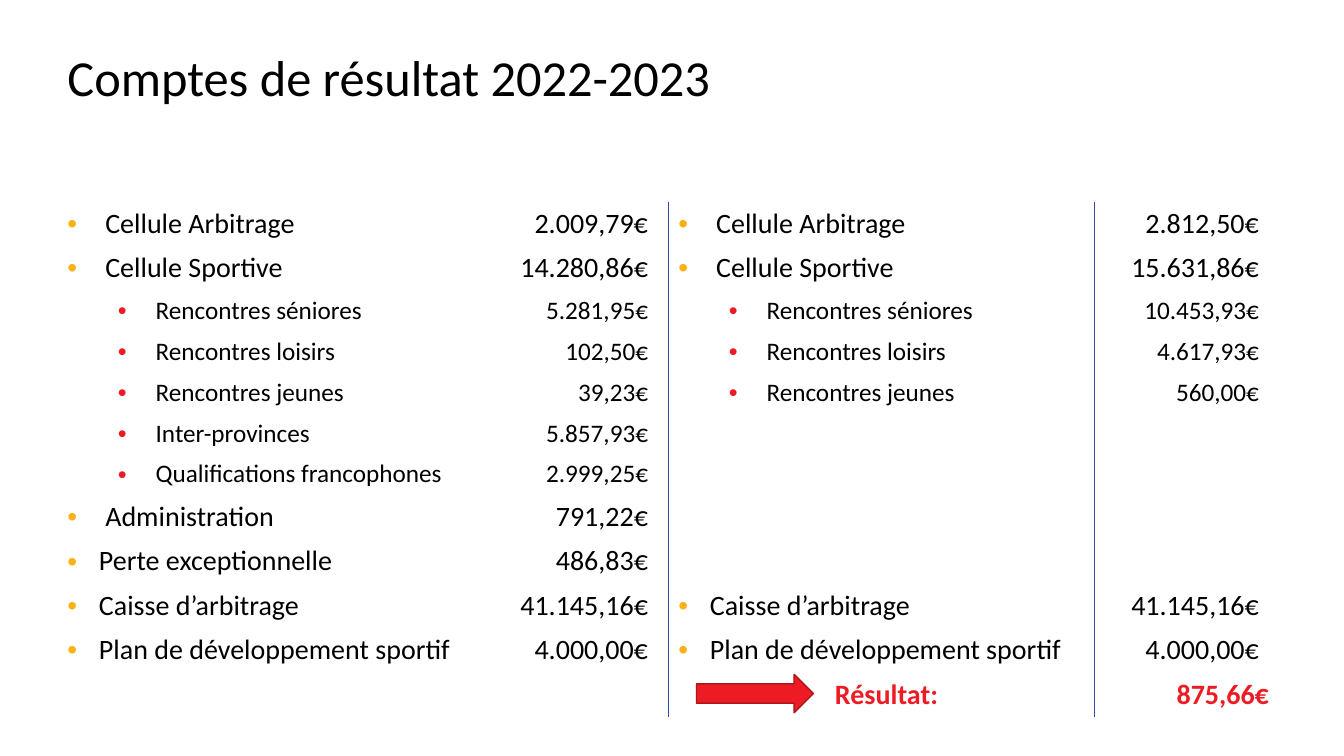
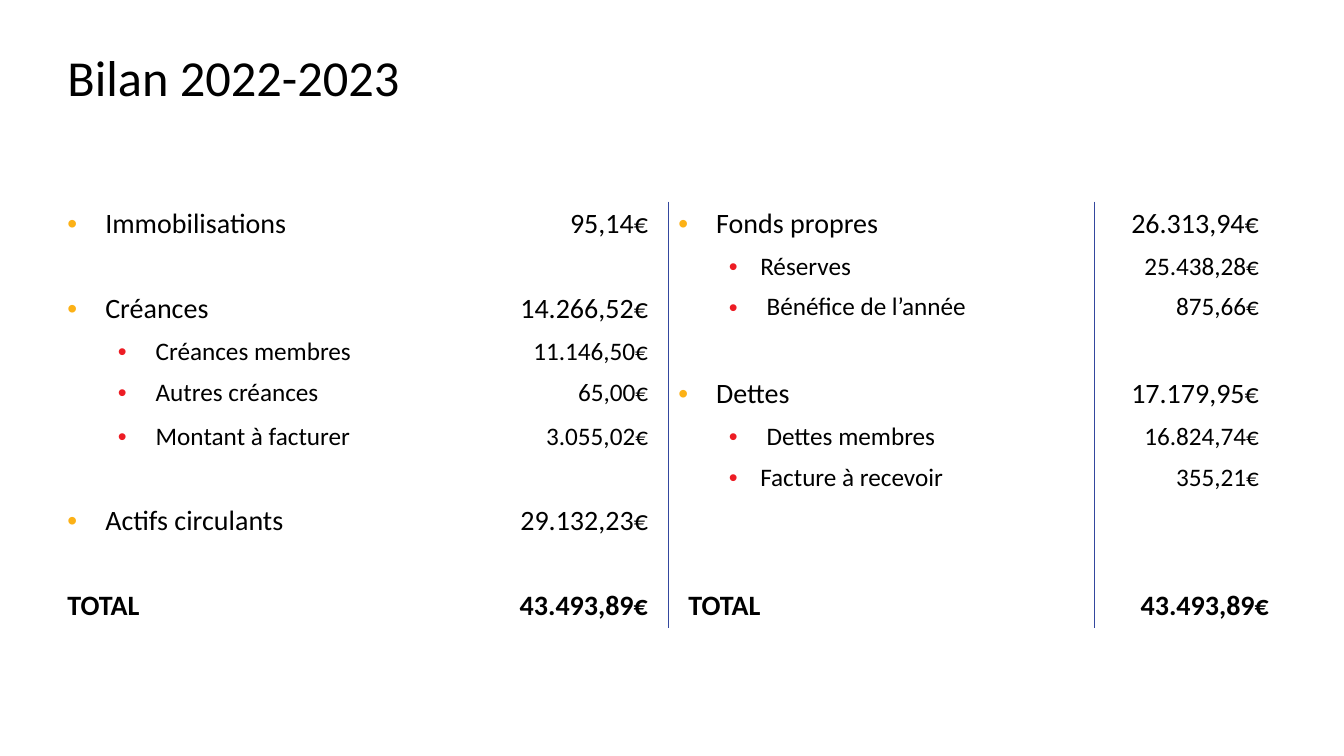
from lxml.etree import SubElement, Element
from pptx import Presentation
from pptx.dml.color import RGBColor
from pptx.enum.shapes import MSO_SHAPE as Shape
from pptx.enum.text import MSO_ANCHOR as Anchor, PP_ALIGN as Align
from pptx.oxml.ns import qn
from pptx.util import Pt

BLACK, RED, DARK_RED, AMBER, BLUE = "000000", "ED1C24", "AF151B", "FCB116", "34489E"
FONT = "Calibri"
NO_GRID = "{2D5ABB26-0587-4C30-8999-92F81FD0307C}"
TITLE_BOX = (41, 28.8, 880, 56.9)
TABLE_LEFT, TABLE_TOP, ROW_HEIGHT = 41, 144, 29.2
COLUMN_WIDTHS = (301, 135.4, 304.6, 131.8)
RULES = (1, 2)
PAD, WIDE_PAD = 7.2, 14.4

BASE = {"size": 20, "color": BLACK, "bold": False, "bullet": None, "left": 0, "hang": 0,
        "align": Align.LEFT, "label_pad": PAD, "amount_pad": WIDE_PAD}
MAIN = BASE | {"bullet": AMBER, "left": 27, "hang": 27}
MAIN_NEAR = MAIN | {"left": 22.5, "hang": 22.5}
SUB = BASE | {"size": 18, "bullet": RED, "left": 63, "hang": 27}
SUB_NEAR = SUB | {"left": 58.5, "hang": 22.5}
TOTAL = BASE | {"bold": True}
TOTAL_RIGHT = TOTAL | {"label_pad": WIDE_PAD, "amount_pad": PAD}
RESULT = TOTAL_RIGHT | {"color": RED, "align": Align.CENTER}

PAGES = [
    {
        "title": "Comptes de résultat 2022-2023",
        "arrow": (497.5, 481.7, 83.5, 27.4),
        "left": [
            ("Cellule Arbitrage", "2.009,79€", MAIN),
            ("Cellule Sportive", "14.280,86€", MAIN),
            ("Rencontres séniores", "5.281,95€", SUB),
            ("Rencontres loisirs", "102,50€", SUB),
            ("Rencontres jeunes", "39,23€", SUB),
            ("Inter-provinces", "5.857,93€", SUB),
            ("Qualifications francophones", "2.999,25€", SUB),
            ("Administration", "791,22€", MAIN),
            ("Perte exceptionnelle", "486,83€", MAIN_NEAR),
            ("Caisse d’arbitrage", "41.145,16€", MAIN_NEAR),
            ("Plan de développement sportif", "4.000,00€", MAIN_NEAR),
            None,
        ],
        "right": [
            ("Cellule Arbitrage", "2.812,50€", MAIN),
            ("Cellule Sportive", "15.631,86€", MAIN),
            ("Rencontres séniores", "10.453,93€", SUB),
            ("Rencontres loisirs", "4.617,93€", SUB),
            ("Rencontres jeunes", "560,00€", SUB),
            None,
            None,
            None,
            None,
            ("Caisse d’arbitrage", "41.145,16€", MAIN_NEAR),
            ("Plan de développement sportif", "4.000,00€", MAIN_NEAR),
            ("Résultat:", "875,66€", RESULT),
        ],
    },
    {
        "title": "Bilan 2022-2023",
        "arrow": None,
        "left": [
            ("Immobilisations", "95,14€", MAIN),
            None,
            ("Créances", "14.266,52€", MAIN),
            ("Créances membres", "11.146,50€", SUB),
            ("Autres créances", "65,00€", SUB),
            ("Montant à facturer", "3.055,02€", SUB),
            None,
            ("Actifs circulants", "29.132,23€", MAIN),
            None,
            ("TOTAL", "43.493,89€", TOTAL),
        ],
        "right": [
            ("Fonds propres", "26.313,94€", MAIN),
            ("Réserves", "25.438,28€", SUB_NEAR),
            ("Bénéfice de l’année", "875,66€", SUB),
            None,
            ("Dettes", "17.179,95€", MAIN),
            ("Dettes membres", "16.824,74€", SUB),
            ("Facture à recevoir", "355,21€", SUB_NEAR),
            None,
            None,
            ("TOTAL", "43.493,89€", TOTAL_RIGHT),
        ],
    },
]


def rgb(value):
    return RGBColor.from_string(value)


def points(values):
    return [Pt(value) for value in values]


def write(para, text, size, color=BLACK, bold=False):
    span = para.add_run()
    span.text = text
    for name, value in {"name": FONT, "size": Pt(size), "bold": bold}.items():
        setattr(span.font, name, value)
    span.font.color.rgb = rgb(color)


def add_bullet(para, look):
    properties = para._p.get_or_add_pPr()
    properties.set("marL", str(Pt(look["left"])))
    properties.set("indent", str(-Pt(look["hang"])))
    color = SubElement(properties, qn("a:buClr"))
    SubElement(color, qn("a:srgbClr"), val=look["bullet"])
    SubElement(properties, qn("a:buFont"), typeface="Arial")
    SubElement(properties, qn("a:buChar"), char="•")


def add_border(cell, side):
    line = Element(qn(f"a:{side}"), w=str(Pt(1)))
    fill = SubElement(line, qn("a:solidFill"))
    SubElement(fill, qn("a:srgbClr"), val=BLUE)
    cell._tc.get_or_add_tcPr().insert(0, line)


def add_title(page, text):
    title = page.shapes.title
    title.left, title.top, title.width, title.height = points(TITLE_BOX)
    title.text_frame.vertical_anchor = Anchor.MIDDLE
    para = title.text_frame.paragraphs[0]
    para.alignment, para.line_spacing = Align.LEFT, 0.9
    write(para, text, 36)


def fill_entry(label_cell, amount_cell, entry):
    label, amount, look = entry
    label_cell.margin_left = Pt(look["label_pad"])
    amount_cell.margin_right = Pt(look["amount_pad"])
    label_para = label_cell.text_frame.paragraphs[0]
    if look["bullet"]:
        add_bullet(label_para, look)
    amount_para = amount_cell.text_frame.paragraphs[0]
    for para, text, align in ((label_para, label, look["align"]),
                              (amount_para, amount, Align.RIGHT)):
        para.alignment = align
        write(para, text, look["size"], look["color"], look["bold"])


def add_accounts(page, left, right):
    count = len(left)
    frame = page.shapes.add_table(count, len(COLUMN_WIDTHS), *points(
        (TABLE_LEFT, TABLE_TOP, sum(COLUMN_WIDTHS), count * ROW_HEIGHT)))
    table = frame.table
    table.first_row = table.horz_banding = False
    table._tbl.tblPr.find(qn("a:tableStyleId")).text = NO_GRID
    for column, width in zip(table.columns, COLUMN_WIDTHS):
        column.width = Pt(width)
    for row in table.rows:
        row.height = Pt(ROW_HEIGHT)
        for index, cell in enumerate(row.cells):
            cell.fill.background()
            if index in RULES:
                add_border(cell, "lnR")
            if index - 1 in RULES:
                add_border(cell, "lnL")
    for first_column, entries in ((0, left), (2, right)):
        for index, entry in enumerate(entries):
            if entry:
                fill_entry(table.cell(index, first_column),
                           table.cell(index, first_column + 1), entry)


def add_arrow(page, place):
    arrow = page.shapes.add_shape(Shape.RIGHT_ARROW, *points(place))
    arrow.shadow.inherit = False
    arrow.fill.solid()
    arrow.fill.fore_color.rgb = rgb(RED)
    arrow.line.color.rgb = rgb(DARK_RED)
    arrow.line.width = Pt(1)


def main():
    deck = Presentation()
    deck.slide_width, deck.slide_height = points((960, 540))
    for content in PAGES:
        page = deck.slides.add_slide(deck.slide_layouts.get_by_name("Title Only"))
        add_title(page, content["title"])
        add_accounts(page, content["left"], content["right"])
        if content["arrow"]:
            add_arrow(page, content["arrow"])
    deck.save("out.pptx")


if __name__ == "__main__":
    main()
